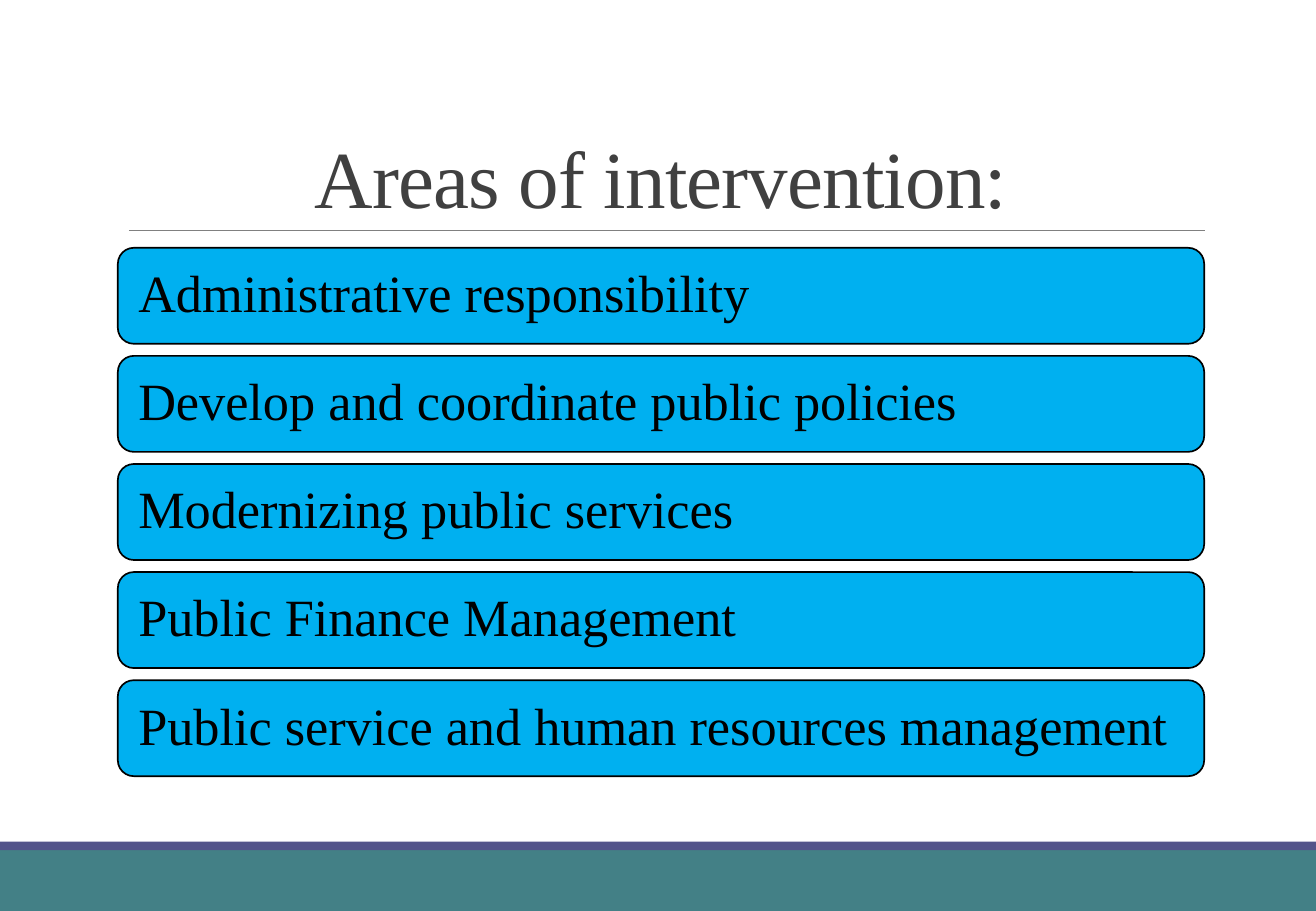
"""Build the "Areas of intervention" slide."""
from lxml import etree
from pptx import Presentation
from pptx.dml.color import RGBColor
from pptx.enum.shapes import MSO_CONNECTOR, MSO_SHAPE as SHAPE
from pptx.enum.text import MSO_ANCHOR as ANCHOR, PP_ALIGN as ALIGN
from pptx.oxml.ns import qn
from pptx.util import Inches, Pt

TITLE = "Areas of intervention:"
AREAS = [
    "Administrative responsibility",
    "Develop and coordinate public policies",
    "Modernizing public services",
    "Public Finance Management",
    "Public service and human resources management",
]
BANDS = [(7, 0.5, "438086"), (6.93, 0.07, "53548A")]
SLIDE_W, SLIDE_H = 10.83, 7.5
LEFT, WIDTH = 0.97, 8.94
BAR_TOP, BAR_H, BAR_STEP = 2.04, 0.79, 0.89


def rgb(value):
    return RGBColor.from_string(value)


def add_box(s, kind, x, y, w, h, fill, line=None):
    sp = s.shapes.add_shape(kind, Inches(x), Inches(y), Inches(w), Inches(h))
    sp.shadow.inherit = False
    sp.fill.solid()
    sp.fill.fore_color.rgb = rgb(fill)
    if line:
        sp.line.color.rgb = rgb(line)
        sp.line.width = Pt(1)
    else:
        sp.line.fill.background()
    return sp


def write(sp, text, size, color, align, anchor, spacing, inset_x, inset_y, track=0):
    tf = sp.text_frame
    tf.word_wrap = True
    tf.vertical_anchor = anchor
    tf.margin_left = tf.margin_right = Inches(inset_x)
    tf.margin_top = tf.margin_bottom = Inches(inset_y)
    p = tf.paragraphs[0]
    p.alignment = align
    p.line_spacing = spacing
    r = p.add_run()
    r.text = text
    r.font.name = "Times New Roman"
    r.font.size = Pt(size)
    r.font.color.rgb = rgb(color)
    if track:
        r._r.get_or_add_rPr().set("spc", str(int(track * 100)))


def add_rule(s, x1, x2, y, color):
    cx = s.shapes.add_connector(
        MSO_CONNECTOR.STRAIGHT, Inches(x1), Inches(y), Inches(x2), Inches(y))
    cx.line.color.rgb = rgb(color)
    cx.line.width = Pt(0.5)
    etree.SubElement(cx._element.spPr, qn("a:effectLst"))


def main():
    prs = Presentation()
    prs.slide_width, prs.slide_height = Inches(SLIDE_W), Inches(SLIDE_H)
    s = prs.slides.add_slide(prs.slide_layouts[6])

    for top, height, color in BANDS:
        add_box(s, SHAPE.RECTANGLE, 0, top, SLIDE_W, height, color)
    add_rule(s, 1.06, 9.92, 1.9, "808080")

    title = s.shapes.add_textbox(Inches(LEFT), Inches(0.31), Inches(WIDTH), Inches(1.59))
    write(title, TITLE, size=48, color="404040", align=ALIGN.CENTER,
          anchor=ANCHOR.BOTTOM, spacing=0.85, inset_x=0.1, inset_y=0.05, track=-0.5)

    for i, area in enumerate(AREAS):
        bar = add_box(s, SHAPE.ROUNDED_RECTANGLE, LEFT, BAR_TOP + i * BAR_STEP,
                      WIDTH, BAR_H, "00B0F0", line="000000")
        write(bar, area, size=31, color="000000", align=ALIGN.LEFT,
              anchor=ANCHOR.MIDDLE, spacing=0.9, inset_x=0.13, inset_y=0.13)

    prs.save("out.pptx")


if __name__ == "__main__":
    main()
